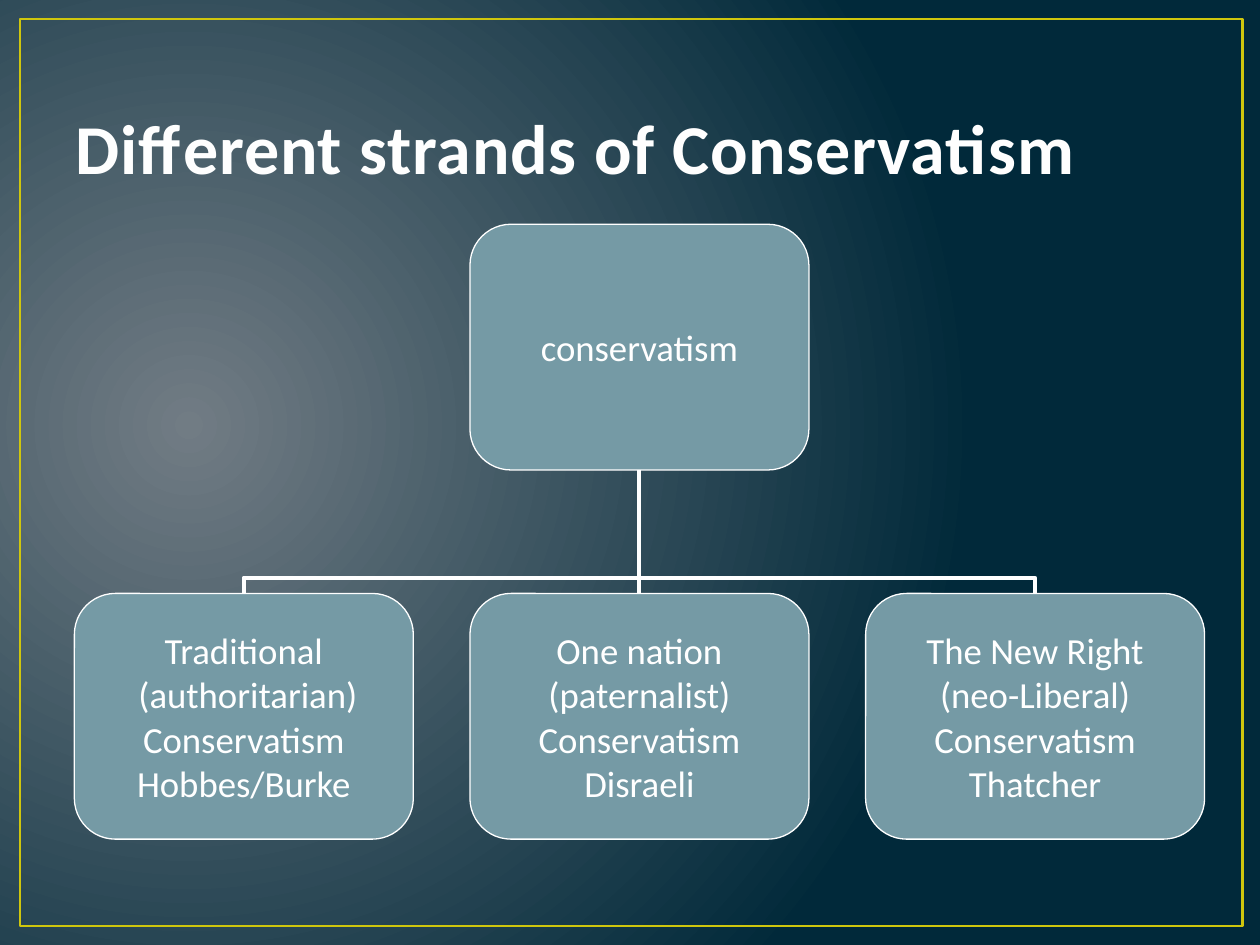
from dataclasses import dataclass

from lxml.etree import SubElement
from pptx import Presentation
from pptx.dml.color import RGBColor
from pptx.enum.shapes import MSO_CONNECTOR, MSO_SHAPE
from pptx.enum.text import MSO_ANCHOR, PP_ALIGN
from pptx.oxml import parse_xml
from pptx.oxml.ns import nsdecls, qn
from pptx.shapes.connector import Connector
from pptx.slide import Slide
from pptx.util import Inches, Pt


@dataclass(frozen=True)
class Theme:
    font: str = "Calibri"
    title_size: float = 40
    box_size: float = 21
    glow: str = "717C84"
    dark: str = "01293A"
    frame: str = "CFC60D"
    title: str = "FEFEFE"
    title_outline: str = "384F55"
    box: str = "759AA5"
    white: str = "FFFFFF"


@dataclass(frozen=True)
class Node:
    left: float
    top: float
    lines: tuple[str, ...]

    @property
    def center(self) -> float:
        return self.left + BOX_WIDTH / 2


THEME = Theme()
BOX_WIDTH, BOX_HEIGHT = 2.69, 1.95
FIRST_LEFT, COLUMN_STEP = 0.59, 3.14
ROOT_TOP, STRAND_TOP = 1.78, 4.71

ROOT = Node(FIRST_LEFT + COLUMN_STEP, ROOT_TOP, ("conservatism",))
STRAND_LINES = (
    ("Traditional", " (authoritarian)", "Conservatism", "Hobbes/Burke"),
    ("One nation", "(paternalist)", "Conservatism", "Disraeli"),
    ("The New Right", "(neo-Liberal)", "Conservatism", "Thatcher"),
)
STRANDS = [
    Node(FIRST_LEFT + column * COLUMN_STEP, STRAND_TOP, lines)
    for column, lines in enumerate(STRAND_LINES)
]


def color(value: str) -> RGBColor:
    return RGBColor.from_string(value)


def paint_background(page: Slide) -> None:
    """Radial gradient that glows from the left."""
    page.background.fill.solid()
    properties = page.element.xpath(".//p:bgPr")[0]
    properties.replace(properties[0], parse_xml(
        f'<a:gradFill {nsdecls("a")} rotWithShape="1"><a:gsLst>'
        f'<a:gs pos="0"><a:srgbClr val="{THEME.glow}"/></a:gs>'
        f'<a:gs pos="100000"><a:srgbClr val="{THEME.dark}"/></a:gs></a:gsLst>'
        '<a:path path="circle">'
        '<a:fillToRect l="15000" t="50000" r="85000" b="60000"/>'
        '</a:path></a:gradFill>'))


def add_frame(page: Slide) -> None:
    frame = page.shapes.add_shape(
        MSO_SHAPE.RECTANGLE, Inches(0.16), Inches(0.15), Inches(9.7), Inches(7.2))
    frame.shadow.inherit = False
    frame.fill.background()
    frame.line.color.rgb = color(THEME.frame)
    frame.line.width = Pt(1.5)


def format_title(page: Slide, text: str) -> None:
    title = page.shapes.title
    title.left, title.top = Inches(0.5), Inches(0.3)
    title.width, title.height = Inches(9), Inches(1.25)
    title.text_frame.text = text
    title.text_frame.vertical_anchor = MSO_ANCHOR.BOTTOM
    title.text_frame.paragraphs[0].alignment = PP_ALIGN.LEFT
    span = title.text_frame.paragraphs[0].runs[0]
    span.font.name = THEME.font
    span.font.size = Pt(THEME.title_size)
    span.font.bold = True
    span.font.color.rgb = color(THEME.title)
    # Letter spacing and text outline
    properties = span.font._element
    properties.set("spc", "50")
    properties.insert(0, parse_xml(
        f'<a:ln {nsdecls("a")} w="{Pt(1.05)}"><a:solidFill>'
        f'<a:srgbClr val="{THEME.title_outline}"/></a:solidFill></a:ln>'))


def style_connector(connector: Connector) -> None:
    connector.line.color.rgb = color(THEME.white)
    connector.line.width = Pt(2.25)
    SubElement(connector._element.spPr, qn("a:effectLst"))


def connect(page: Slide, strand: Node, root: Node) -> None:
    """Line from the top of a strand up to the bottom of the root."""
    start, end = strand.top, root.top + BOX_HEIGHT
    offset = strand.center - root.center
    if abs(offset) < 0.01:
        style_connector(page.shapes.add_connector(
            MSO_CONNECTOR.STRAIGHT, Inches(strand.center), Inches(start),
            Inches(root.center), Inches(end)))
        return

    # An elbow runs sideways first, so it is laid flat and then turned upright
    side = 1 if offset > 0 else -1
    middle_x, middle_y = (strand.center + root.center) / 2, (start + end) / 2
    half_width, half_height = (start - end) / 2, abs(offset) / 2
    elbow = page.shapes.add_connector(
        MSO_CONNECTOR.ELBOW,
        Inches(middle_x + side * half_width), Inches(middle_y - half_height),
        Inches(middle_x - side * half_width), Inches(middle_y + half_height))
    properties = elbow._element.spPr
    properties.find(qn("a:xfrm")).set("rot", str((90 if side > 0 else 270) * 60000))
    guides = properties.find(qn("a:prstGeom")).get_or_add_avLst()
    SubElement(guides, qn("a:gd"), name="adj1", fmla="val 12800")
    style_connector(elbow)


def add_node(page: Slide, node: Node) -> None:
    box = page.shapes.add_shape(
        MSO_SHAPE.ROUNDED_RECTANGLE, Inches(node.left), Inches(node.top),
        Inches(BOX_WIDTH), Inches(BOX_HEIGHT))
    box.shadow.inherit = False
    box.fill.solid()
    box.fill.fore_color.rgb = color(THEME.box)
    box.line.color.rgb = color(THEME.white)
    box.line.width = Pt(0.75)

    frame = box.text_frame
    frame.margin_left = frame.margin_right = 0
    frame.margin_top = frame.margin_bottom = 0
    frame.word_wrap = False
    frame.vertical_anchor = MSO_ANCHOR.MIDDLE
    frame.text = "\n".join(node.lines)
    for paragraph in frame.paragraphs:
        paragraph.alignment = PP_ALIGN.CENTER
        for span in paragraph.runs:
            span.font.name = THEME.font
            span.font.size = Pt(THEME.box_size)
            span.font.color.rgb = color(THEME.white)


def main() -> None:
    deck = Presentation()
    deck.slide_width, deck.slide_height = Inches(10), Inches(7.5)
    page = deck.slides.add_slide(deck.slide_layouts[5])

    # Backdrop and title
    paint_background(page)
    add_frame(page)
    format_title(page, "Different strands of Conservatism")

    # Tree: lines first, so that the boxes lie on top
    for strand in reversed(STRANDS):
        connect(page, strand, ROOT)
    for node in (ROOT, *STRANDS):
        add_node(page, node)

    deck.save("out.pptx")


if __name__ == "__main__":
    main()
